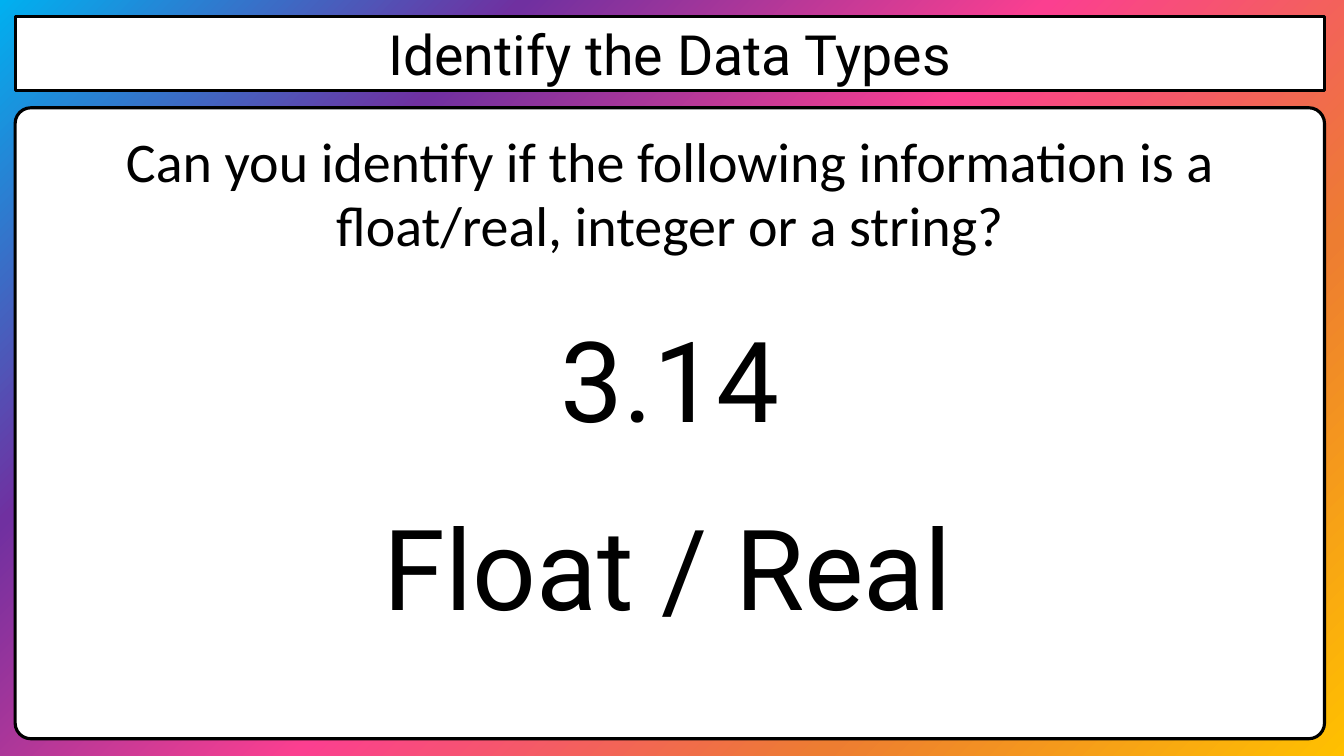
from dataclasses import dataclass

import lxml.etree
import pptx
import pptx.dml.color
import pptx.enum.shapes
import pptx.enum.text
import pptx.oxml.ns
import pptx.util

Pt = pptx.util.Pt
Anchor = pptx.enum.text.MSO_ANCHOR
Fit = pptx.enum.text.MSO_AUTO_SIZE
Preset = pptx.enum.shapes.MSO_SHAPE
qn = pptx.oxml.ns.qn

BLACK, WHITE = "000000", "FFFFFF"
BACKDROP_STOPS = ["FFC000", "ED7D31", "FB3F90", "7030A0", "00B0F0"]


@dataclass
class Label:
    text: str
    left: float
    top: float
    width: float
    height: float
    size: float
    font: str = "Roboto"
    anchor: Anchor = Anchor.TOP
    inset_top: float = 3.6
    inset_bottom: float = 3.6
    line_spacing: float = 1.0
    fit: Fit = Fit.NONE


@dataclass
class Panel(Label):
    preset: Preset = Preset.RECTANGLE
    corner: float | None = None


PANELS = [
    Panel("Identify the Data Types", 10.8, 11.5, 935.3, 53.3, 39.6,
          anchor=Anchor.MIDDLE, inset_top=0, inset_bottom=0),
    Panel("Can you identify if the following information is a "
          "float/real, integer or a string?", 10.8, 77, 935.3, 450.7, 40,
          font="Calibri", inset_top=13.6, line_spacing=0.95,
          preset=Preset.ROUNDED_RECTANGLE, corner=0.025),
]
ANSWERS = [
    Label("3.14", 12.2, 218.2, 933.1, 104.4, 80, fit=Fit.SHAPE_TO_FIT_TEXT),
    Label("Float / Real", 10.8, 352.8, 933.1, 104.4, 80, fit=Fit.SHAPE_TO_FIT_TEXT),
]


def color(value: str) -> pptx.dml.color.RGBColor:
    return pptx.dml.color.RGBColor.from_string(value)


def paint_background(page) -> None:
    """Fill the page with rings of colour that spread from the bottom right corner."""
    fill = page.background.fill
    fill.gradient()
    gradient = page._element.find(".//" + qn("a:gradFill"))
    for child in list(gradient):
        gradient.remove(child)
    stops = lxml.etree.SubElement(gradient, qn("a:gsLst"))
    step = 100000 // (len(BACKDROP_STOPS) - 1)
    for index, value in enumerate(BACKDROP_STOPS):
        stop = lxml.etree.SubElement(stops, qn("a:gs"), pos=str(index * step))
        lxml.etree.SubElement(stop, qn("a:srgbClr"), val=value)
    rings = lxml.etree.SubElement(gradient, qn("a:path"), path="circle")
    lxml.etree.SubElement(rings, qn("a:fillToRect"), l="100000", t="100000")


def write_text(box, label: Label) -> None:
    frame = box.text_frame
    frame_format = {
        "word_wrap": True,
        "auto_size": label.fit,
        "vertical_anchor": label.anchor,
        "margin_top": Pt(label.inset_top),
        "margin_bottom": Pt(label.inset_bottom),
    }
    for name, value in frame_format.items():
        setattr(frame, name, value)
    para = frame.paragraphs[0]
    para.alignment = pptx.enum.text.PP_ALIGN.CENTER
    para.line_spacing = label.line_spacing
    span = para.add_run()
    span.text = label.text
    for name, value in {"name": label.font, "size": Pt(label.size)}.items():
        setattr(span.font, name, value)
    span.font.color.rgb = color(BLACK)


def bounds(label: Label) -> list[pptx.util.Length]:
    return [Pt(length) for length in (label.left, label.top, label.width, label.height)]


def add_panel(page, panel: Panel) -> None:
    box = page.shapes.add_shape(panel.preset, *bounds(panel))
    if panel.corner is not None:
        box.adjustments[0] = panel.corner
    box.shadow.inherit = False
    box.fill.solid()
    box.fill.fore_color.rgb = color(WHITE)
    box.line.color.rgb = color(BLACK)
    box.line.width = Pt(2.25)
    write_text(box, panel)


def add_answer(page, answer: Label) -> None:
    write_text(page.shapes.add_textbox(*bounds(answer)), answer)


def main() -> None:
    deck = pptx.Presentation()
    deck.slide_width, deck.slide_height = Pt(960), Pt(540)
    page = deck.slides.add_slide(deck.slide_layouts[6])
    paint_background(page)
    for panel in PANELS:
        add_panel(page, panel)
    for answer in ANSWERS:
        add_answer(page, answer)
    deck.save("out.pptx")


if __name__ == "__main__":
    main()
